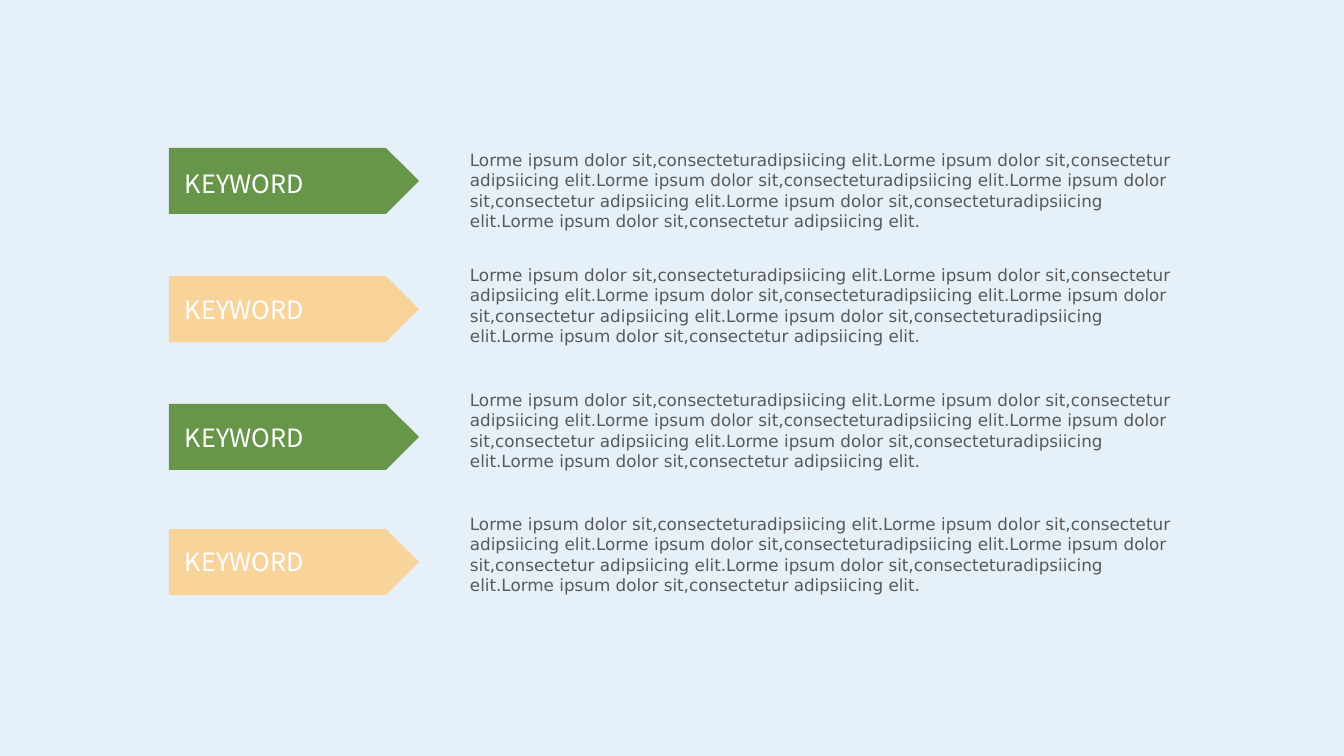
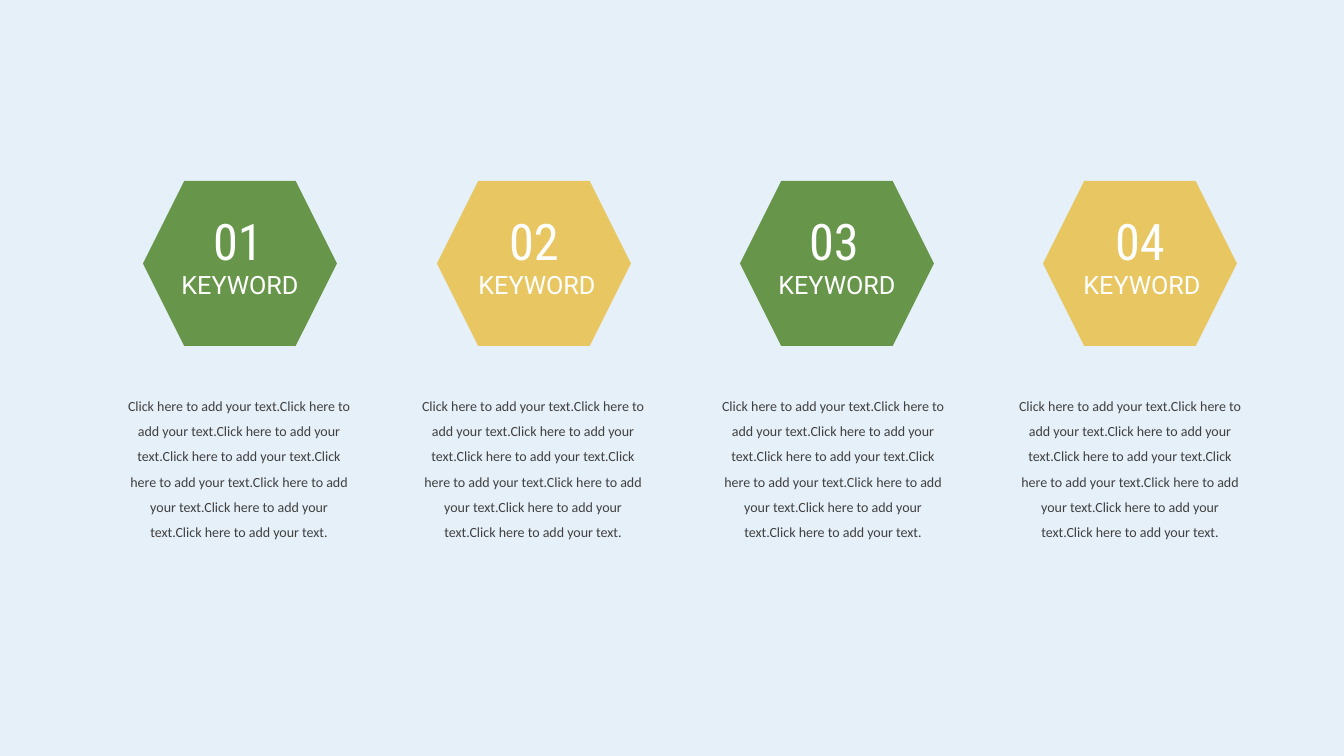
from dataclasses import dataclass

from lxml import etree
from pptx import Presentation
from pptx import util as u
from pptx.dml import color
from pptx.enum import shapes, text
from pptx.oxml import ns

SLIDE_WIDTH, SLIDE_HEIGHT = 1344, 756
EMU_PER_PX = 914400 / 100.8


@dataclass(frozen=True)
class Theme:
    background: str = "E6F0F9"
    green: str = "679549"
    peach: str = "F8D49B"
    gold: str = "E8C762"
    white: str = "FFFFFF"
    gray: str = "595959"
    dark: str = "404040"
    plate_font: str = "Noto Sans CJK SC"
    row_font: str = "DejaVu Sans"
    keyword_font: str = "Roboto"
    number_font: str = "Roboto Condensed"
    column_font: str = "Calibri"
    number_size: int = 36
    keyword_size: int = 18
    row_size: int = 12
    column_size: int = 10


THEME = Theme()

ROW_TEXT = (
    "Lorme ipsum dolor sit,consecteturadipsiicing elit."
    "Lorme ipsum dolor sit,consectetur adipsiicing elit."
) * 3
COLUMN_TEXT = "Click here to add your text." * 8

ROWS = [
    (148, 3, -2, THEME.green),
    (276, 1, -15, THEME.peach),
    (404, 1, -18, THEME.green),
    (529, 0, -19, THEME.peach),
]
COLUMNS = [
    ("01", 143, 1, 3, -28, THEME.green),
    ("02", 437, 3, 6, -28, THEME.gold),
    ("03", 740, 0, 3, -31, THEME.green),
    ("04", 1043, 3, 5, -37, THEME.gold),
]


def px(length):
    return u.Emu(round(length * EMU_PER_PX))


def rgb(value):
    return color.RGBColor.from_string(value)


def add_slide(presentation):
    slide = presentation.slides.add_slide(presentation.slide_layouts[6])
    fill = slide.background.fill
    fill.solid()
    fill.fore_color.rgb = rgb(THEME.background)
    return slide


def add_block(slide, kind, box, fill):
    shape = slide.shapes.add_shape(kind, *map(px, box))
    shape.shadow.inherit = False
    shape.fill.solid()
    shape.fill.fore_color.rgb = rgb(fill)
    shape.line.fill.background()


def add_text(slide, box, content, font, size, fill, insets=(10, 5),
             centered=False, line_spacing=None, grow=False):
    frame = slide.shapes.add_textbox(*map(px, box)).text_frame
    frame.word_wrap = True
    if grow:
        frame.auto_size = text.MSO_AUTO_SIZE.SHAPE_TO_FIT_TEXT
    frame.margin_left = frame.margin_right = px(insets[0])
    frame.margin_top = frame.margin_bottom = px(insets[1])
    paragraph = frame.paragraphs[0]
    paragraph.text = content
    paragraph.font.name = font
    paragraph.font.size = u.Pt(size)
    paragraph.font.color.rgb = rgb(fill)
    if centered:
        paragraph.alignment = text.PP_ALIGN.CENTER
    if line_spacing:
        paragraph.line_spacing = line_spacing
    return paragraph


def add_label(slide, box, content, font, size, **options):
    paragraph = add_text(slide, box, content, font, size, THEME.white, **options)
    paragraph.space_before = u.Pt(0)
    spacing = paragraph._p.pPr.find(ns.qn("a:spcBef"))
    spacing.remove(spacing[0])
    etree.SubElement(spacing, ns.qn("a:spcPct")).set("val", "20000")


def add_keyword_row(slide, box, label_shift, body_shift, fill):
    left, top, width, height = box
    add_block(slide, shapes.MSO_SHAPE.PENTAGON, box, fill)
    add_label(slide, (left + 6, top + label_shift, 205, 56), "KEYWORD",
              THEME.plate_font, THEME.keyword_size, line_spacing=1.4)
    add_text(slide, (left + width + 44, top + body_shift, 724, 105), ROW_TEXT,
             THEME.row_font, THEME.row_size, THEME.gray, insets=(7, 4), grow=True)


def add_keyword_column(slide, box, number, number_shift, keyword_shift,
                       body_shift, fill):
    left, top, width, height = box
    add_block(slide, shapes.MSO_SHAPE.HEXAGON, box, fill)
    labels = [
        (number, number_shift, 22, THEME.number_font, THEME.number_size),
        ("KEYWORD", keyword_shift, 81, THEME.keyword_font, THEME.keyword_size),
    ]
    for content, shift, drop, font, size in labels:
        add_label(slide, (left + shift, top + drop, 188, 46), content, font, size,
                  insets=(13, 7), centered=True)
    add_text(slide, (left + body_shift, top + height + 38, 248, 186), COLUMN_TEXT,
             THEME.column_font, THEME.column_size, THEME.dark,
             centered=True, line_spacing=1.5, grow=True)


def build_rows_slide(presentation):
    slide = add_slide(presentation)
    for top, label_shift, body_shift, fill in ROWS:
        add_keyword_row(slide, (169, top, 250, 66), label_shift, body_shift, fill)


def build_columns_slide(presentation):
    slide = add_slide(presentation)
    for number, left, number_shift, keyword_shift, body_shift, fill in COLUMNS:
        add_keyword_column(slide, (left, 181, 194, 165), number, number_shift,
                           keyword_shift, body_shift, fill)


def main():
    presentation = Presentation()
    presentation.slide_width = px(SLIDE_WIDTH)
    presentation.slide_height = px(SLIDE_HEIGHT)
    build_rows_slide(presentation)
    build_columns_slide(presentation)
    presentation.save("out.pptx")


if __name__ == "__main__":
    main()
